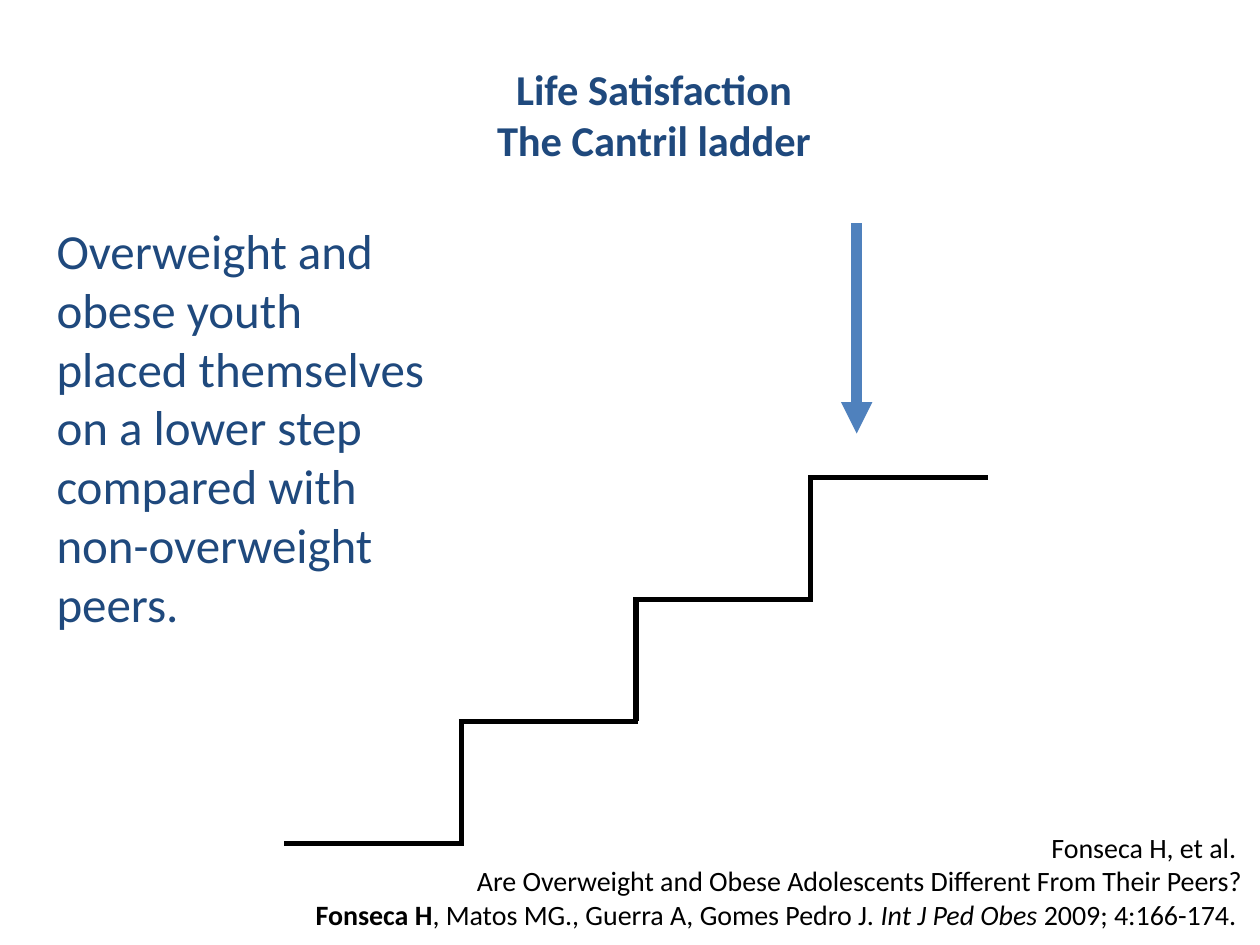
from pptx import Presentation
from pptx.dml.color import RGBColor
from pptx.enum.shapes import MSO_CONNECTOR
from pptx.enum.text import MSO_ANCHOR, PP_ALIGN
from pptx.oxml.ns import qn
from pptx.util import Cm, Pt
from lxml import etree

STRAIGHT = MSO_CONNECTOR.STRAIGHT
TOP, MIDDLE = MSO_ANCHOR.TOP, MSO_ANCHOR.MIDDLE
LEFT, CENTER, RIGHT = PP_ALIGN.LEFT, PP_ALIGN.CENTER, PP_ALIGN.RIGHT
NAVY, BLUE, BLACK = "1F497D", "4F81BD", "000000"


def rgb(value):
    return RGBColor.from_string(value)


def add_run(p, text, size=16, color=BLACK, bold=False, italic=False, font="Calibri"):
    r = p.add_run()
    r.text = text
    r.font.name, r.font.size = font, Pt(size)
    r.font.bold, r.font.italic = bold, italic
    r.font.color.rgb = rgb(color)


class Deck:
    """Holds the line and text style and the current slide."""

    def __init__(self, width, height):
        self.prs = Presentation()
        self.prs.slide_width, self.prs.slide_height = Cm(width), Cm(height)
        self.s = self.prs.slides.add_slide(self.prs.slide_layouts[6])

    def text(self, box, paragraphs, align=LEFT, anchor=TOP, **style):
        sp = self.s.shapes.add_textbox(*map(Cm, box))
        tf = sp.text_frame
        tf.word_wrap, tf.vertical_anchor = True, anchor
        for i, runs in enumerate(paragraphs):
            p = tf.paragraphs[0] if i == 0 else tf.add_paragraph()
            p.alignment = align
            for text, extra in runs:
                add_run(p, text, **{**style, **extra})

    def line(self, x1, y1, x2, y2, color=BLACK, width=3, arrow=False):
        cx = self.s.shapes.add_connector(STRAIGHT, Cm(x1), Cm(y1), Cm(x2), Cm(y2))
        cx.line.color.rgb, cx.line.width = rgb(color), Pt(width)
        if arrow:
            etree.SubElement(cx.line._get_or_add_ln(), qn("a:tailEnd"), type="triangle")
        etree.SubElement(cx._element.spPr, qn("a:effectLst"))

    def stairs(self, x, y, tread, riser, steps, overlap=0.05):
        for i in range(steps):
            left, level = x + i * tread, y - i * riser
            right = left + tread
            self.line(left - overlap, level, right + overlap, level)
            if i < steps - 1:
                self.line(right, level, right, level - riser)


def main():
    deck = Deck(25.4, 19.05)
    deck.text((2.39, 1.1, 21.59, 2.4),
              [[("Life Satisfaction", {})], [("The Cantril ladder", {})]],
              CENTER, MIDDLE, size=24.3, color=NAVY, bold=True)
    deck.text((0.89, 4.32, 8.31, 9.93),
              [[("Overweight and obese youth placed themselves on a lower step "
                 "compared with non-overweight peers.", {})]],
              size=28, color=NAVY)
    deck.text((3.71, 16.5, 21.59, 2.5),
              [[("Fonseca H, et al. ", {})],
               [("Are Overweight and Obese Adolescents Different From Their Peers?", {})],
               [("Fonseca H", {"bold": True}),
                (", Matos MG., Guerra A, Gomes Pedro J. ", {}),
                ("Int J Ped Obes ", {"italic": True}),
                ("2009; 4:166-174. ", {})]],
              RIGHT, MIDDLE)
    deck.line(17.27, 4.5, 17.27, 8.74, BLUE, 6, arrow=True)
    deck.stairs(5.78, 17, 3.52, 2.46, 4)
    deck.prs.save("out.pptx")


if __name__ == "__main__":
    main()
